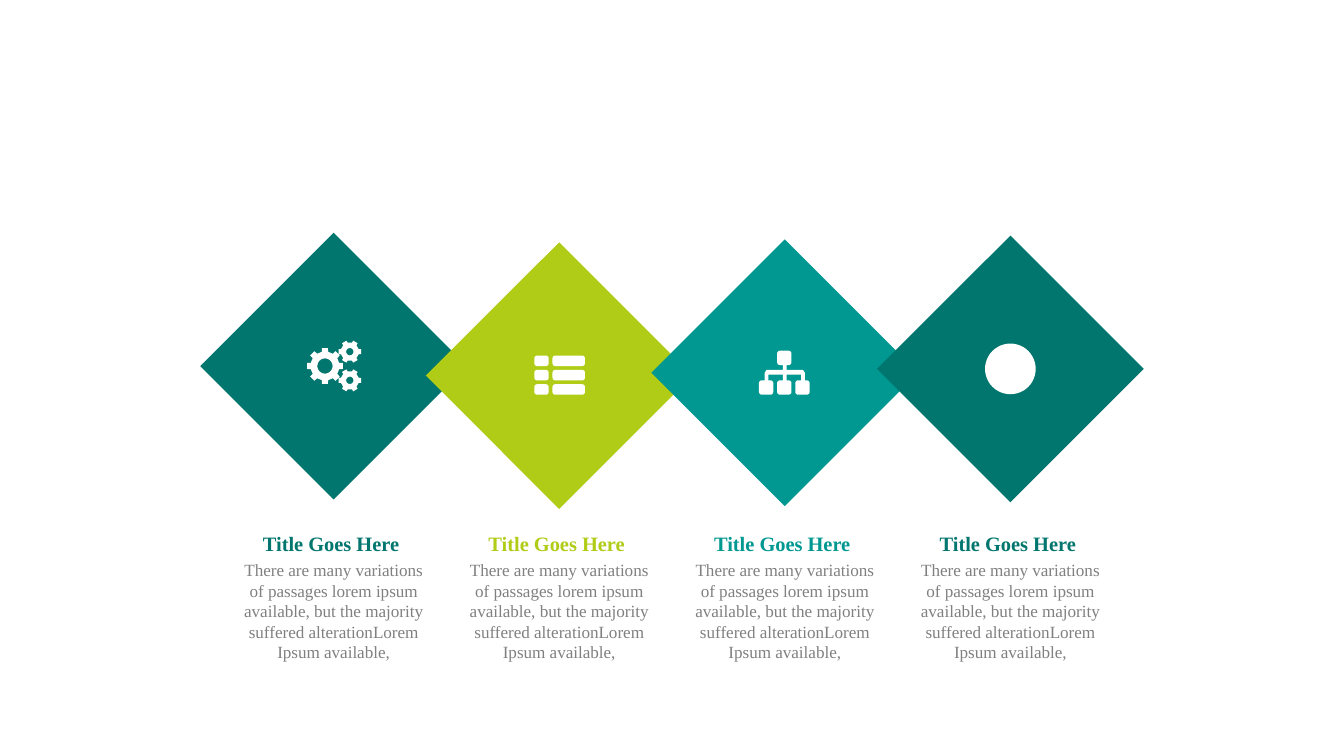
from math import cos, sin, pi
from lxml.etree import SubElement
from pptx import Presentation
from pptx.dml.color import RGBColor
from pptx.enum.shapes import MSO_SHAPE as Shape
from pptx.enum.text import PP_ALIGN as Align, MSO_AUTO_SIZE as Fit
from pptx.oxml.ns import qn
from pptx.util import Inches, Pt

FONT = "Times New Roman"
GREY, WHITE = "808080", "FFFFFF"
TEAL, LIME, AQUA = "01766E", "B1CC17", "019892"
BODY = ("There are many variations\nof passages lorem ipsum available, "
        "but the majority suffered alterationLorem\nIpsum available,")
SIDE = 2.79
WIDE = 2.27
DOT = 0.53


def tint(part, code):
    """Give a fill or line format a solid hex colour."""
    part.solid()
    part.fore_color.rgb = RGBColor.from_string(code)


def arc(x, y, rad, start=0, sweep=2 * pi, steps=24):
    """Return points along an arc around x, y."""
    turns = [start + sweep * k / steps for k in range(steps + 1)]
    return [(x + rad * cos(t), y + rad * sin(t)) for t in turns]


def pill(x, y, w, h, rad=0.03):
    """Return the outline of a rounded box."""
    mids = [(x + w - rad, y + h - rad), (x + rad, y + h - rad),
            (x + rad, y + rad), (x + w - rad, y + rad)]
    return [p for k, (a, b) in enumerate(mids)
            for p in arc(a, b, rad, k * pi / 2, pi / 2, 6)]


def cog(x, y, rad, teeth):
    """Return the outline and the hole of a gear."""
    step = pi / teeth
    rim = [(0.8, -0.55), (1, -0.42), (1, 0.42), (0.8, 0.55)]
    edge = [(x + rad * f * cos(t), y + rad * f * sin(t))
            for k in range(teeth) for f, d in rim
            for t in [(2 * k + d) * step]]
    return [edge, arc(x, y, rad * (0.42 if teeth == 8 else 0.32))]


def gears():
    """Return three gears."""
    return cog(-0.09, 0, 0.19, 8) + [
        ring for y in (-0.15, 0.15) for ring in cog(0.17, y, 0.12, 6)]


def rows():
    """Return a list of three rows."""
    return [pill(x, y, w, 0.11) for y in (-0.21, -0.06, 0.09)
            for x, w in ((-0.26, 0.15), (-0.07, 0.34))]


def tree():
    """Return a chart of one box above three."""
    half = [(0.02, -0.08), (0.02, -0.03), (0.19, -0.03), (0.21, 0), (0.21, 0.08),
            (0.17, 0.08), (0.17, 0.02), (0.02, 0.02), (0.02, 0.08)]
    spots = [(-0.08, -0.23)] + [(x, 0.08) for x in (-0.27, -0.08, 0.11)]
    bars = half + [(-x, y) for x, y in reversed(half)]
    return [pill(x, y, 0.15, 0.15) for x, y in spots] + [bars]


def write(para, text, size, color, bold=False):
    """Write centred text, with line breaks, into a paragraph."""
    para.alignment = Align.CENTER
    para.space_before = Pt(round(size * 0.2, 1))
    for k, line in enumerate(text.split("\n")):
        if k:
            para.add_line_break()
            SubElement(para._p[-1], qn("a:rPr"), sz=str(round(size * 100)))
        run = para.add_run()
        run.text = line
        run.font.name, run.font.size, run.font.bold = FONT, Pt(size), bold
        run.font.color.rgb = RGBColor.from_string(color)


class Deck:
    """Hold the current slide and draw its elements."""

    def __init__(self):
        """Start a deck with one blank slide."""
        self.prs = Presentation()
        self.prs.slide_width, self.prs.slide_height = Inches(14.06), Inches(7.91)
        self.slide = self.prs.slides.add_slide(self.prs.slide_layouts[6])

    def paint(self, shape, color):
        """Fill a shape and drop its line and shadow."""
        shape.shadow.inherit = False
        tint(shape.fill, color)
        shape.line.fill.background()

    def plain(self, group, kind, x, y, size, color):
        """Draw a preset shape centred on x, y."""
        shape = group.shapes.add_shape(kind, Inches(x - size / 2), Inches(y - size / 2),
                                       Inches(size), Inches(size))
        self.paint(shape, color)

    def icon(self, group, x, y, rings):
        """Draw outlines around x, y as one white shape."""
        paths = [[(Inches(x + a), Inches(y + b)) for a, b in ring] for ring in rings]
        pen = group.shapes.build_freeform(*paths[0][0])
        pen.add_line_segments(paths[0][1:], close=True)
        for path in paths[1:]:
            pen.move_to(*path[0])
            pen.add_line_segments(path[1:], close=True)
        self.paint(pen.convert_to_shape(), WHITE)

    def badge(self, x, y, color, rings):
        """Draw a diamond with an icon or a dot at its centre."""
        group = self.slide.shapes.add_group_shape()
        self.plain(group, Shape.DIAMOND, x, y, SIDE, color)
        if rings:
            self.icon(group, x, y, rings)
        else:
            self.plain(group, Shape.OVAL, x, y, DOT, WHITE)

    def note(self, x, y, color):
        """Draw a heading and its text centred on x."""
        box = self.slide.shapes.add_textbox(Inches(x - WIDE / 2), Inches(y),
                                            Inches(WIDE), Inches(1.39))
        frame = box.text_frame
        frame.word_wrap = True
        frame.auto_size = Fit.SHAPE_TO_FIT_TEXT
        frame.margin_left = frame.margin_right = 0
        frame.margin_top = frame.margin_bottom = 0
        write(frame.paragraphs[0], "Title Goes Here ", 15.4, color, bold=True)
        write(frame.add_paragraph(), BODY, 12.9, GREY)


def main():
    """Build and save the slide."""
    deck = Deck()
    steps = [(TEAL, 3.83, gears()), (LIME, 3.93, rows()),
             (AQUA, 3.9, tree()), (TEAL, 3.86, None)]
    for k, (color, y, rings) in enumerate(steps):
        x = 3.49 + 2.36 * k
        deck.badge(x, y, color, rings)
        deck.note(x, 5.56, color)
    deck.prs.save("out.pptx")


if __name__ == "__main__":
    main()
